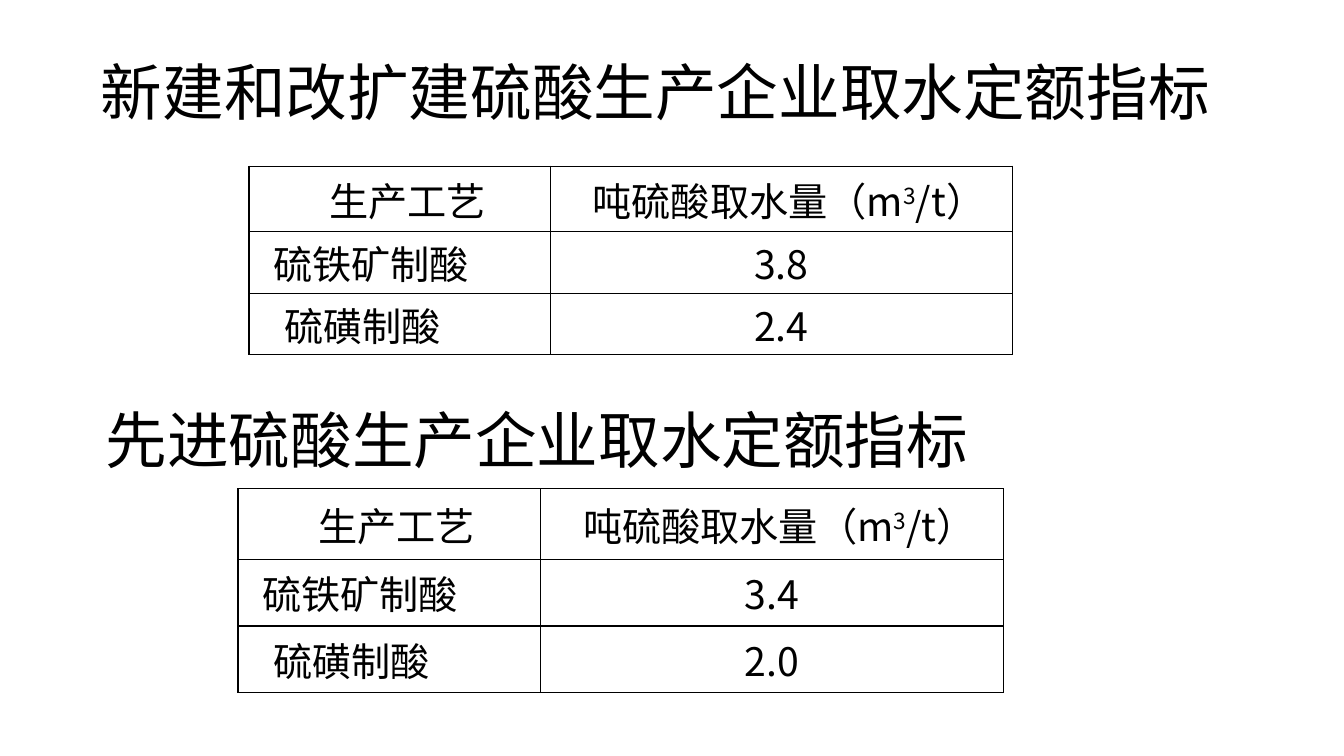
import pptx
import pptx.util
import pptx.dml.color
import pptx.enum.text
import pptx.oxml
import pptx.oxml.ns

Inches, Pt = pptx.util.Inches, pptx.util.Pt
ALIGN = pptx.enum.text.PP_ALIGN
MIDDLE = pptx.enum.text.MSO_ANCHOR.MIDDLE

COLORS = {"text": "000000", "border": "000000"}
CJK = "Noto Sans CJK SC"
HEADER = [[("生产工艺", 0)], [("吨硫酸取水量（m", 0), ("3", 30), ("/t）", 0)]]
# Process name and its left indent in inches
PROCESSES = [("硫铁矿制酸", 0.17), ("硫磺制酸", 0.28)]


def add_run(p, text, size, font, baseline=0):
    r = p.add_run()
    r.text = text
    formats = {"size": Pt(size), "name": font, "bold": False}
    for name, value in formats.items():
        setattr(r.font, name, value)
    r.font.color.rgb = pptx.dml.color.RGBColor.from_string(COLORS["text"])
    rPr = r._r.get_or_add_rPr()
    if baseline:
        rPr.set("baseline", str(baseline * 1000))
    ea = pptx.oxml.parse_xml(f'<a:ea {pptx.oxml.ns.nsdecls("a")} typeface="{CJK}"/>')
    rPr.find(pptx.oxml.ns.qn("a:latin")).addnext(ea)


def fill_heading(sp, box, text, font):
    for name, value in zip(("left", "top", "width", "height"), box):
        setattr(sp, name, Inches(value))
    tf = sp.text_frame
    formats = {"word_wrap": True, "vertical_anchor": MIDDLE,
               "auto_size": pptx.enum.text.MSO_AUTO_SIZE.NONE}
    for name, value in formats.items():
        setattr(tf, name, value)
    p = tf.paragraphs[0]
    p.alignment, p.line_spacing = ALIGN.LEFT, 0.9
    add_run(p, text, 44, font)


def fill_cell(cell, runs, align, margin=0, indent=0):
    # Borders come before the fill in the cell properties
    tcPr = cell._tc.get_or_add_tcPr()
    for side in "LRTB":
        tcPr.append(pptx.oxml.parse_xml(
            f'<a:ln{side} {pptx.oxml.ns.nsdecls("a")} w="12700"><a:solidFill>'
            f'<a:srgbClr val="{COLORS["border"]}"/></a:solidFill></a:ln{side}>'))
    cell.fill.background()
    formats = {"vertical_anchor": MIDDLE, "margin_top": 0, "margin_bottom": 0,
               "margin_left": Inches(0.07), "margin_right": Inches(0.07)}
    for name, value in formats.items():
        setattr(cell, name, value)
    p = cell.text_frame.paragraphs[0]
    p.alignment = align
    pPr = p._p.get_or_add_pPr()
    pPr.set("marL", str(Inches(margin)))
    pPr.set("indent", str(Inches(indent)))
    for text, baseline in runs:
        add_run(p, text, 28, CJK, baseline)


def add_quota_table(s, left, top, cols, rows, quotas):
    frame = s.shapes.add_table(len(rows), len(cols), Inches(left), Inches(top),
                               Inches(sum(cols)), Inches(sum(rows)))
    table = frame.table
    table.first_row = table.horz_banding = False
    for col, width in zip(table.columns, cols):
        col.width = Inches(width)
    for row, height in zip(table.rows, rows):
        row.height = Inches(height)
    for i, runs in enumerate(HEADER):
        fill_cell(table.cell(0, i), runs, ALIGN.CENTER, indent=0.15)
    for i, ((process, margin), quota) in enumerate(zip(PROCESSES, quotas), 1):
        fill_cell(table.cell(i, 0), [(process, 0)], ALIGN.LEFT, margin=margin)
        fill_cell(table.cell(i, 1), [(quota, 0)], ALIGN.CENTER)


def main():
    prs = pptx.Presentation()
    prs.slide_width, prs.slide_height = Inches(13.33), Inches(7.5)
    s = prs.slides.add_slide(prs.slide_layouts[5])

    # New and expanded plants
    fill_heading(s.shapes.title, (0.9, 0.22, 11.5, 1.45),
                 "新建和改扩建硫酸生产企业取水定额指标", "Calibri")
    add_quota_table(s, 2.47, 1.65, (2.99, 4.58), (0.65, 0.61, 0.61), ("3.8", "2.4"))

    # Advanced plants
    fill_heading(s.shapes.add_textbox(0, 0, 0, 0), (0.95, 3.68, 11.5, 1.45),
                 "先进硫酸生产企业取水定额指标", "Arial")
    add_quota_table(s, 2.36, 4.85, (3, 4.59), (0.7, 0.66, 0.66), ("3.4", "2.0"))

    prs.save("out.pptx")


if __name__ == "__main__":
    main()
